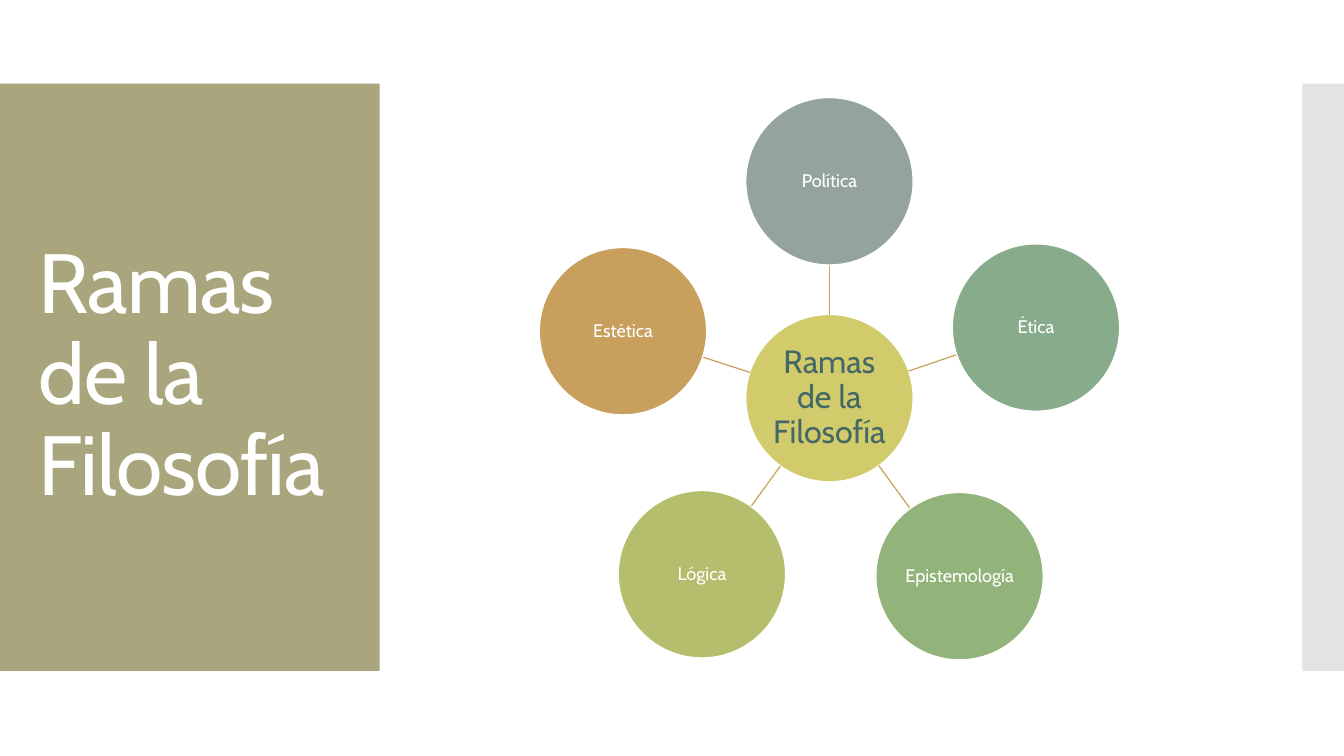
import math
from dataclasses import dataclass

import lxml.etree
import pptx
import pptx.util
import pptx.dml.color
import pptx.enum.shapes
import pptx.enum.text
import pptx.oxml.ns

Pt = pptx.util.Pt
SHAPE = pptx.enum.shapes.MSO_SHAPE
ALIGN = pptx.enum.text.PP_ALIGN
ANCHOR = pptx.enum.text.MSO_ANCHOR


@dataclass(frozen=True)
class Theme:
    font: str = "Cabin"
    white: str = "FFFFFF"
    panel: str = "A9A57C"
    strip: str = "C8C8C8"
    hub: str = "D2CB6C"
    ink: str = "456867"
    spoke: str = "C89F5D"
    title: float = 60
    center: float = 23
    label: float = 13
    line: float = 0.85


THEME = Theme()
TITLE = "Ramas de la Filosofía"
SIZE = 119.5
HUB = (592.5, 284.4)
# Name, colour and centre of each branch, clockwise from the top
NODES = [
    ("Política", "95A39D", (592.5, 129.5)),
    ("Ética", "88AB8B", (740, 234)),
    ("Epistemología", "92B47A", (685.4, 411.6)),
    ("Lógica", "B5BE6C", (501.4, 410.2)),
    ("Estética", "C89F5D", (445, 236.6)),
]


def rgb(color):
    return pptx.dml.color.RGBColor.from_string(color)


def write(frame, text, size, color, align):
    """Fill a text frame with one styled paragraph."""
    frame.text = text
    frame.word_wrap = True
    frame.auto_size = pptx.enum.text.MSO_AUTO_SIZE.NONE
    frame.vertical_anchor = ANCHOR.MIDDLE
    para = frame.paragraphs[0]
    para.alignment = align
    para.line_spacing = 0.9
    run = para.runs[0]
    run.font.name = THEME.font
    run.font.size = Pt(size)
    run.font.color.rgb = rgb(color)
    return run


def add_block(slide, kind, left, top, width, height, color):
    """Add a flat filled shape without an outline."""
    shape = slide.shapes.add_shape(
        kind, Pt(left), Pt(top), Pt(width), Pt(height))
    shape.shadow.inherit = False
    shape.fill.solid()
    shape.fill.fore_color.rgb = rgb(color)
    shape.line.fill.background()
    return shape


def fade(shape, percent):
    """Set the opacity of a solid fill."""
    tint = shape.fill._xPr.find(".//" + pptx.oxml.ns.qn("a:srgbClr"))
    alpha = lxml.etree.SubElement(tint, pptx.oxml.ns.qn("a:alpha"))
    alpha.set("val", str(percent * 1000))


def add_title(slide):
    title = slide.shapes.title
    title.left, title.top = Pt(20.2), Pt(88.6)
    title.width, title.height = Pt(236), Pt(362)
    run = write(title.text_frame, TITLE, THEME.title, THEME.white, ALIGN.LEFT)
    run.font._element.set("spc", "-60")
    # Bring the title in front of the panel
    slide.shapes._spTree.append(title._element)


def add_disc(slide, center, text, fill, size, color, inset):
    x, y = center
    disc = add_block(slide, SHAPE.OVAL, x - SIZE / 2, y - SIZE / 2,
                     SIZE, SIZE, fill)
    disc.line.color.rgb = rgb(THEME.white)
    disc.line.width = Pt(THEME.line)
    frame = disc.text_frame
    frame.margin_left = frame.margin_right = Pt(inset)
    frame.margin_top = frame.margin_bottom = Pt(inset)
    write(frame, text, size, color, ALIGN.CENTER)


def add_spoke(slide, start, end):
    """Join the rims of two discs along the line between centres."""
    dx, dy = end[0] - start[0], end[1] - start[1]
    part = SIZE / 2 / math.hypot(dx, dy)
    spoke = slide.shapes.add_connector(
        pptx.enum.shapes.MSO_CONNECTOR.STRAIGHT,
        Pt(start[0] + dx * part), Pt(start[1] + dy * part),
        Pt(end[0] - dx * part), Pt(end[1] - dy * part))
    spoke.line.color.rgb = rgb(THEME.spoke)
    spoke.line.width = Pt(THEME.line)
    lxml.etree.SubElement(spoke._element.spPr,
                          pptx.oxml.ns.qn("a:effectLst"))


def main():
    deck = pptx.Presentation()
    deck.slide_width, deck.slide_height = Pt(960), Pt(540)
    slide = deck.slides.add_slide(deck.slide_layouts[5])

    # Side panels and title
    add_block(slide, SHAPE.RECTANGLE, 0, 59.8, 271.2, 419.5, THEME.panel)
    strip = add_block(slide, SHAPE.RECTANGLE, 930.3, 59.8, 29.7, 419.5,
                      THEME.strip)
    fade(strip, 50)
    add_title(slide)

    # Hub with its branches
    add_disc(slide, HUB, TITLE, THEME.hub, THEME.center, THEME.ink, 1.5)
    for name, fill, center in NODES:
        add_spoke(slide, HUB, center)
        add_disc(slide, center, name, fill, THEME.label, THEME.white, 0.8)

    deck.save("out.pptx")


if __name__ == "__main__":
    main()
